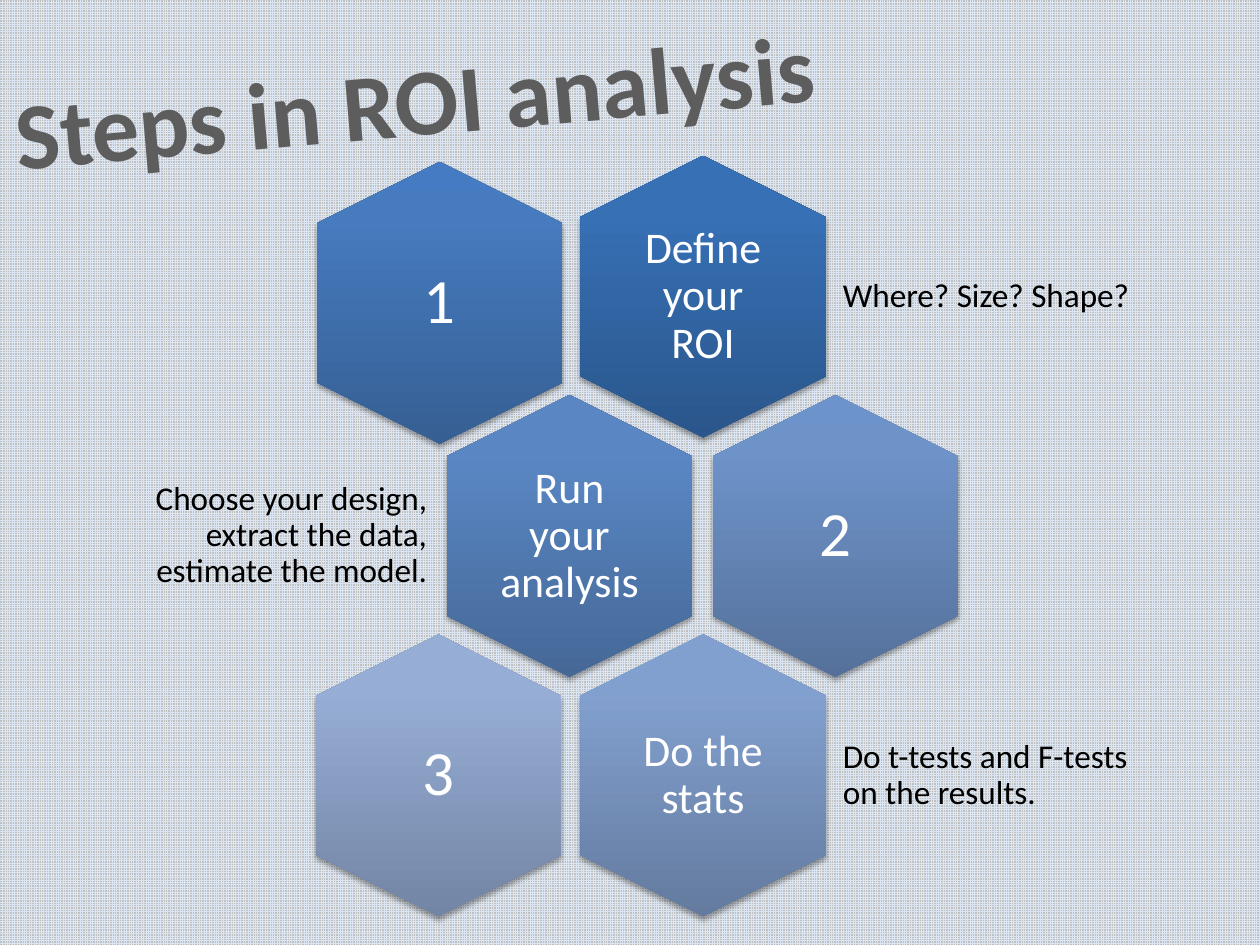
import pptx
import pptx.util
import pptx.oxml
import pptx.oxml.ns
import pptx.dml.color
import pptx.enum.dml
import pptx.enum.shapes
import pptx.enum.text
from lxml import etree

Pt = pptx.util.Pt
ALIGN = pptx.enum.text.PP_ALIGN
FONT = "Calibri"
HEX_LENGTH, HEX_SPAN = 161.28, 140.4
HEX_TEXT_WIDTH, HEX_TEXT_HEIGHT = 96.48, 110.88
LABEL_HEIGHT = 96.48

COLORS = {
    "white": "FFFFFF",
    "black": "000000",
    "grid": "DCE6F2",
    "ground": "BFBFBF",
    "title_top": "555555",
    "title_middle": "5D5D5D",
}

STEPS = [
    {"number": "1", "name": "Define your ROI", "label": "Where? Size? Shape?",
     "top": 99.36, "number_left": 170.64, "name_left": 321.12, "number_drop": 3.6,
     "label_left": 475.92, "label_width": 180, "align": ALIGN.LEFT,
     "name_fill": ("2A568B", "3770B5", "3570B8"),
     "number_fill": ("365F93", "467BBF", "447BC3")},
    {"number": "2", "name": "Run your analysis",
     "label": "Choose your design, extract the data, estimate the model.",
     "top": 236.16, "number_left": 396.72, "name_left": 244.8, "number_drop": 0,
     "label_left": 75.6, "label_width": 174.24, "align": ALIGN.RIGHT,
     "name_fill": ("456897", "5A87C4", "5887C7"),
     "number_fill": ("55719B", "6E93C9", "6D93CC")},
    {"number": "3", "name": "Do the stats", "label": "Do t-tests and F-tests on the results.",
     "top": 372.96, "number_left": 169.92, "name_left": 321.12, "number_drop": 0,
     "label_left": 475.92, "label_width": 180, "align": ALIGN.LEFT,
     "name_fill": ("647B9F", "82A0CF", "81A0D1"),
     "number_fill": ("7385A4", "96ADD5", "95ADD7")},
]


def rgb(value):
    return pptx.dml.color.RGBColor.from_string(value)


def add_element(parent, tag, **attributes):
    element = etree.SubElement(parent, pptx.oxml.ns.qn(tag))
    for name, value in attributes.items():
        element.set(name, str(value))
    return element


def set_gradient(fill, properties, stops, angle):
    fill.gradient()
    gradient = properties.find(pptx.oxml.ns.qn("a:gradFill"))
    gradient.set("rotWithShape", "0")
    for child in list(gradient):
        gradient.remove(child)
    stop_list = add_element(gradient, "a:gsLst")
    for position, color in stops:
        stop = add_element(stop_list, "a:gs", pos=position * 1000)
        add_element(stop, "a:srgbClr", val=color)
    add_element(gradient, "a:lin", ang=angle * 60000, scaled=0)


def add_shadow(shape):
    effects = add_element(shape.element.spPr, "a:effectLst")
    shadow = add_element(effects, "a:outerShdw", blurRad=Pt(3.1), dist=Pt(1.8),
                         dir=90 * 60000, rotWithShape=0)
    color = add_element(shadow, "a:srgbClr", val=COLORS["black"])
    add_element(color, "a:alpha", val=35000)


def add_text(slide, left, top, width, height, text, size, color, align, inset):
    box = slide.shapes.add_textbox(Pt(left), Pt(top), Pt(width), Pt(height))
    frame = box.text_frame
    frame.word_wrap = True
    frame.vertical_anchor = pptx.enum.text.MSO_ANCHOR.MIDDLE
    frame.margin_left = frame.margin_right = Pt(inset)
    frame.margin_top = frame.margin_bottom = Pt(inset)
    frame.text = text
    paragraph = frame.paragraphs[0]
    paragraph.alignment = align
    paragraph.line_spacing = 0.9
    font = paragraph.runs[0].font
    font.name, font.size = FONT, Pt(size)
    font.color.rgb = rgb(color)


def add_hexagon(slide, left, top, colors, text, size, inset):
    hexagon = slide.shapes.add_shape(
        pptx.enum.shapes.MSO_SHAPE.HEXAGON,
        Pt(left), Pt(top), Pt(HEX_LENGTH), Pt(HEX_SPAN))
    hexagon.rotation = 90
    hexagon.line.fill.background()
    set_gradient(hexagon.fill, hexagon.element.spPr, zip((0, 80, 100), colors), 270)
    add_shadow(hexagon)
    add_text(slide, left + (HEX_LENGTH - HEX_TEXT_WIDTH) / 2,
             top + (HEX_SPAN - HEX_TEXT_HEIGHT) / 2, HEX_TEXT_WIDTH, HEX_TEXT_HEIGHT,
             text, size, COLORS["white"], ALIGN.CENTER, inset)


def add_step(slide, step):
    top = step["top"]
    add_hexagon(slide, step["name_left"], top, step["name_fill"], step["name"], 25, 7.2)
    add_text(slide, step["label_left"], top + (HEX_SPAN - LABEL_HEIGHT) / 2,
             step["label_width"], LABEL_HEIGHT, step["label"], 19,
             COLORS["black"], step["align"], 5.76)
    add_hexagon(slide, step["number_left"], top + step["number_drop"],
                step["number_fill"], step["number"], 36, 0)


def add_title(slide, left, top, width, height):
    box = slide.shapes.add_textbox(Pt(left), Pt(top), Pt(width), Pt(height))
    box.rotation = 355.1
    frame = box.text_frame
    frame.word_wrap = False
    frame.auto_size = pptx.enum.text.MSO_AUTO_SIZE.SHAPE_TO_FIT_TEXT
    frame.text = "Steps in ROI analysis"
    paragraph = frame.paragraphs[0]
    paragraph.alignment = ALIGN.CENTER
    run = paragraph.runs[0]
    run.font.name, run.font.size, run.font.bold = FONT, Pt(54), True
    properties = run.font.fill and run._r.get_or_add_rPr()
    stops = [(0, COLORS["title_top"]), (49, COLORS["title_middle"]),
             (50, COLORS["black"]), (100, COLORS["black"])]
    set_gradient(run.font.fill, properties, stops, 90)
    outline = add_element(properties, "a:ln", w=Pt(1.4))
    add_element(add_element(outline, "a:solidFill"), "a:srgbClr", val=COLORS["white"])
    properties.insert(0, outline)


def set_background(slide):
    fill = slide.background.fill
    fill.patterned()
    fill.pattern = pptx.enum.dml.MSO_PATTERN.SMALL_GRID
    fill.fore_color.rgb = rgb(COLORS["grid"])
    fill.back_color.rgb = rgb(COLORS["ground"])


def main():
    presentation = pptx.Presentation()
    presentation.slide_width, presentation.slide_height = Pt(720), Pt(540)
    slide = presentation.slides.add_slide(presentation.slide_layouts[6])
    set_background(slide)
    add_title(slide, -1.44, 20.16, 476.64, 72.72)
    for step in STEPS:
        add_step(slide, step)
    presentation.save("out.pptx")


if __name__ == "__main__":
    main()
